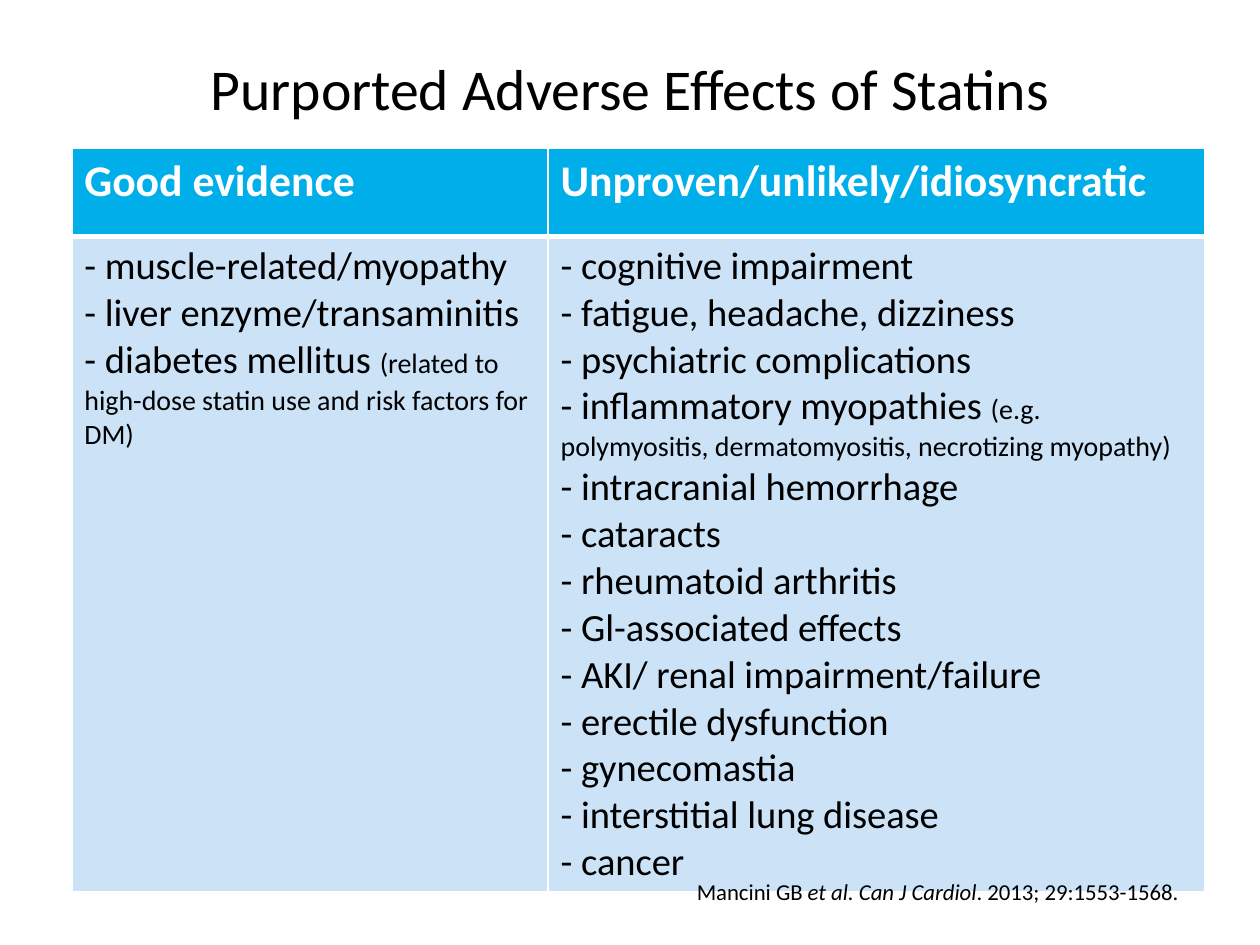
from lxml import etree
from pptx import Presentation, util as u
from pptx.dml.color import RGBColor
from pptx.enum import text
from pptx.oxml import ns

WIDE, HIGH = 10, 7.5
FONT = "Calibri"
HUES = {"ink": "000000", "paper": "FFFFFF", "head": "00AEEA", "body": "CCE3F7"}
BIG, SMALL = 22, 16

HEADS = ["Good evidence", "Unproven/unlikely/idiosyncratic"]
GOOD = [
    ("muscle-related/myopathy", ""),
    ("liver enzyme/transaminitis", ""),
    ("diabetes mellitus", "(related to high-dose statin use and risk factors for DM)"),
]
WEAK = [
    ("cognitive impairment", ""),
    ("fatigue, headache, dizziness", ""),
    ("psychiatric complications", ""),
    ("inflammatory myopathies", "(e.g. polymyositis, dermatomyositis, necrotizing myopathy)"),
    ("intracranial hemorrhage", ""),
    ("cataracts", ""),
    ("rheumatoid arthritis", ""),
    ("Gl-associated effects", ""),
    ("AKI/ renal impairment/failure", ""),
    ("erectile dysfunction", ""),
    ("gynecomastia", ""),
    ("interstitial lung disease", ""),
    ("cancer", ""),
]


def share(left, top, width, height):
    return [u.Inches(v) for v in (left * WIDE, top * HIGH, width * WIDE, height * HIGH)]


def add_run(para, words, size, hue="ink", bold=False, slant=False):
    run = para.add_run()
    run.text = words
    font = run.font
    font.name, font.size = FONT, u.Pt(size)
    font.bold, font.italic = bold, slant
    font.color.rgb = RGBColor.from_string(HUES[hue])


def add_title(slide, words):
    title = slide.shapes.title
    title.left, title.top, title.width, title.height = share(0.05, 0.02, 0.9, 0.117)
    frame = title.text_frame
    frame.auto_size = text.MSO_AUTO_SIZE.NONE
    frame.vertical_anchor = text.MSO_ANCHOR.BOTTOM
    para = frame.paragraphs[0]
    para.alignment = text.PP_ALIGN.CENTER
    para.line_spacing = 0.9
    add_run(para, words, 33)


def add_edge(cell, side, points):
    props = cell._tc.get_or_add_tcPr()
    line = etree.SubElement(props, ns.qn(f"a:ln{side}"), w=str(u.Pt(points)))
    fill = etree.SubElement(line, ns.qn("a:solidFill"))
    etree.SubElement(fill, ns.qn("a:srgbClr"), val=HUES["paper"])


def style_cell(cell, hue, top, base):
    for side, points in zip("LRTB", (1, 1, top, base)):
        add_edge(cell, side, points)
    cell.fill.solid()
    cell.fill.fore_color.rgb = RGBColor.from_string(HUES[hue])


def fill_list(frame, items):
    for n, (main_words, note) in enumerate(items):
        para = frame.add_paragraph() if n else frame.paragraphs[0]
        add_run(para, f"- {main_words}" + (" " if note else ""), BIG)
        if note:
            add_run(para, note, SMALL)


def add_grid(slide):
    grid = slide.shapes.add_table(2, 2, *share(0.057, 0.157, 0.899, 0.778)).table
    for col, wide in zip(grid.columns, (3.78, 5.21)):
        col.width = u.Inches(wide)
    for row, high in zip(grid.rows, (0.7, 5.13)):
        row.height = u.Inches(high)
    for n, (head, items) in enumerate(zip(HEADS, (GOOD, WEAK))):
        top, body = grid.cell(0, n), grid.cell(1, n)
        style_cell(top, "head", 1, 3)
        style_cell(body, "body", 3, 1)
        add_run(top.text_frame.paragraphs[0], head, 25, "paper", bold=True)
        fill_list(body.text_frame, items)


def add_cite(slide, parts):
    frame = slide.shapes.add_textbox(*share(0.05, 0.925, 0.899, 0.06)).text_frame
    frame.word_wrap = True
    para = frame.paragraphs[0]
    para.alignment = text.PP_ALIGN.RIGHT
    para.line_spacing = 0.93
    for words, slant in parts:
        add_run(para, words, 13, slant=slant)


def main():
    deck = Presentation()
    deck.slide_width, deck.slide_height = u.Inches(WIDE), u.Inches(HIGH)
    slide = deck.slides.add_slide(deck.slide_layouts.get_by_name("Title Only"))
    add_title(slide, "Purported Adverse Effects of Statins")
    add_grid(slide)
    add_cite(slide, [
        ("Mancini GB ", False),
        ("et al. Can J Cardiol", True),
        (". 2013; 29:1553-1568. ", False),
    ])
    deck.save("out.pptx")


if __name__ == "__main__":
    main()
